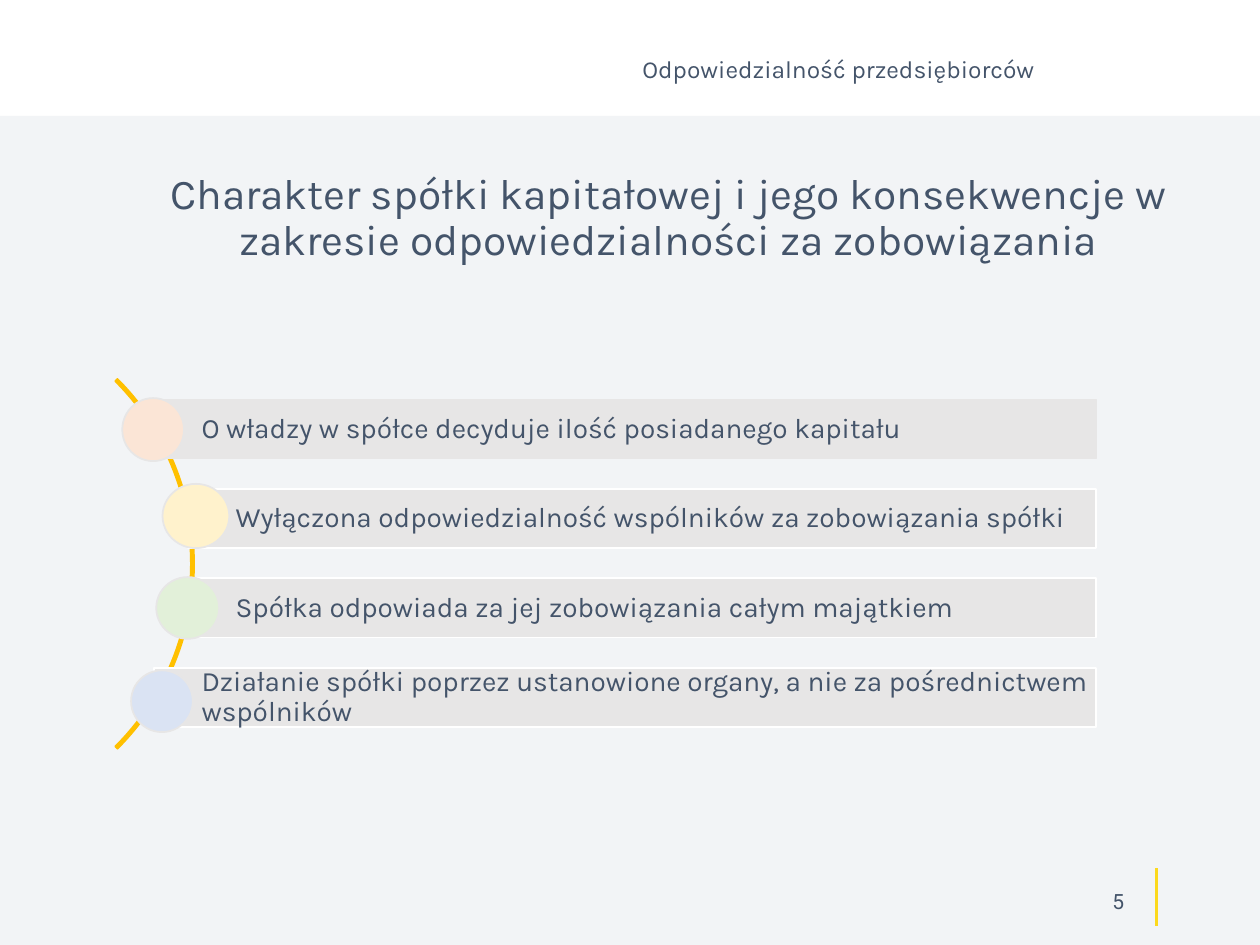
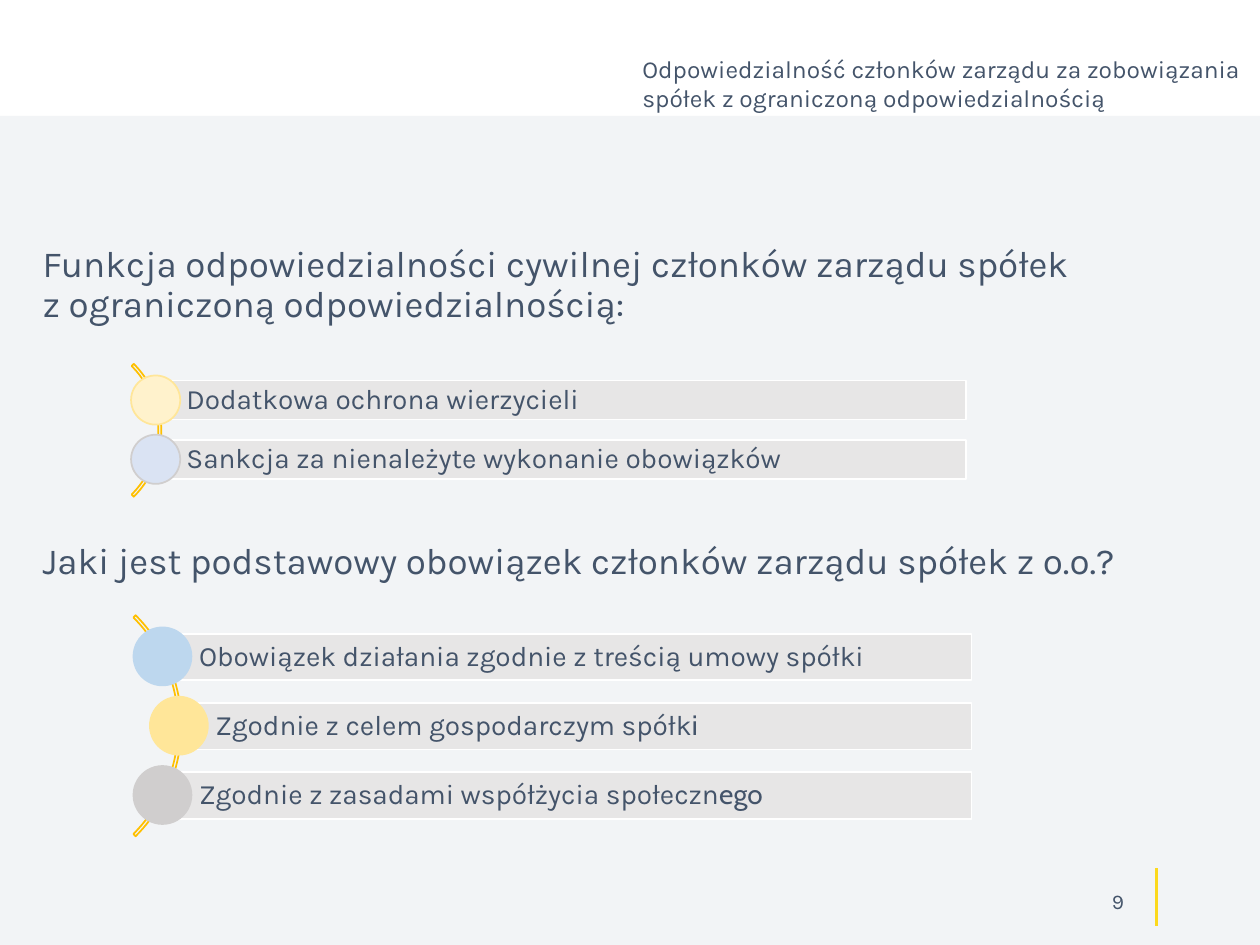
from pptx import Presentation
from pptx.dml.color import RGBColor as RGB
from pptx.enum.shapes import MSO_CONNECTOR as CONNECTOR, MSO_SHAPE as SHAPE
from pptx.enum.text import MSO_ANCHOR as ANCHOR, PP_ALIGN as ALIGN
from pptx.oxml.ns import qn
from pptx.util import Inches, Pt
from lxml import etree

COLORS = {
    "text": "44546A", "panel": "F2F4F6", "accent": "FCD91D", "arc": "FFC000",
    "bar": "E7E6E6", "white": "FFFFFF", "peach": "FBE5D6", "cream": "FFF2CC",
    "mint": "E2F0D9", "ice": "DAE3F3", "sky": "BDD7EE", "sand": "FFE699",
    "gray": "D0CECE",
}
FONT = "Karla"
LAST_LETTERS_FONT = "Cabin"


def add_box(slide, kind, box, fill=None, line=None):
    shape = slide.shapes.add_shape(kind, *map(Inches, box))
    shape.shadow.inherit = False
    if fill:
        shape.fill.solid()
        shape.fill.fore_color.rgb = RGB.from_string(COLORS[fill])
    else:
        shape.fill.background()
    if line:
        shape.line.color.rgb = RGB.from_string(COLORS[line])
        shape.line.width = Pt(1)
    else:
        shape.line.fill.background()
    return shape


def write(shape, text, size, font=FONT, align=ALIGN.LEFT, anchor=ANCHOR.TOP, spacing=None, tail=""):
    frame = shape.text_frame
    frame.word_wrap = True
    frame.vertical_anchor = anchor
    frame.text = text
    paragraph = frame.paragraphs[0]
    paragraph.alignment = align
    if spacing:
        paragraph.line_spacing = spacing
    if tail:
        paragraph.add_run().text = tail
    for run in paragraph.runs:
        run.font.size = Pt(size)
        run.font.name = font
        run.font.color.rgb = RGB.from_string(COLORS["text"])
    if tail:
        paragraph.runs[-1].font.name = LAST_LETTERS_FONT


capital_company = {
    "arc": (-2.61, 2.4, 4.15), "thickness": 0.006, "arc_fill": "arc",
    "top": 3.17, "pitch": 0.71, "height": 0.47, "right": 8.7, "inset": 0.38,
    "rows": [
        ("O władzy w spółce decyduje ilość posiadanego kapitału", "", 1.22, "bar",
         (0.97, 3.16, 0.49, 0.5), "peach", "bar"),
        ("Wyłączona odpowiedzialność wspólników za zobowiązania spółki", "", 1.49, "white",
         (1.29, 3.84, 0.53, 0.51), "cream", "bar"),
        ("Spółka odpowiada za jej zobowiązania całym majątkiem", "", 1.49, "white",
         (1.24, 4.58, 0.5, 0.49), "mint", "bar"),
        ("Działanie spółki poprzez ustanowione organy, a nie za pośrednictwem wspólników", "",
         1.22, "white", (1.04, 5.32, 0.49, 0.49), "ice", "bar"),
    ],
}
liability_function = {
    "arc": (-0.21, 2.67, 1.49), "thickness": 0.016, "arc_fill": None,
    "top": 3.02, "pitch": 0.47, "height": 0.31, "right": 7.67, "inset": 0.25,
    "rows": [
        ("Dodatkowa ochrona wierzycieli", "", 1.23, "white",
         (1.04, 2.98, 0.39, 0.39), "cream", "sand"),
        ("Sankcja za nienależyte wykonanie obowiązków", "", 1.23, "white",
         (1.04, 3.45, 0.39, 0.39), "ice", "gray"),
    ],
}
board_duty = {
    "arc": (-1.04, 4.52, 2.48), "thickness": 0.01, "arc_fill": None,
    "top": 5.03, "pitch": 0.55, "height": 0.37, "right": 7.71, "inset": 0.29,
    "rows": [
        ("Obowiązek działania zgodnie z treścią umowy spółki", "", 1.29, "white",
         (1.06, 4.98, 0.46, 0.46), "sky", "sky"),
        ("Zgodnie z celem gospodarczym spółk", "i", 1.42, "white",
         (1.19, 5.53, 0.46, 0.46), "sand", "sand"),
        ("Zgodnie z zasadami współżycia społeczn", "ego", 1.29, "white",
         (1.06, 6.08, 0.46, 0.46), "gray", "gray"),
    ],
}

pages = [
    {
        "number": "5", "number_font": "Roboto",
        "topic": "Odpowiedzialność przedsiębiorców", "topic_height": 0.34,
        "headings": [
            ("Charakter spółki kapitałowej i jego konsekwencje w zakresie "
             "odpowiedzialności za zobowiązania",
             (0.61, 1.32, 9.39, 1.23), 24.3, ALIGN.CENTER, 0.9),
        ],
        "diagrams": [capital_company],
    },
    {
        "number": "9", "number_font": FONT,
        "topic": "Odpowiedzialność członków zarządu za zobowiązania spółek "
                 "z ograniczoną odpowiedzialnością", "topic_height": 0.57,
        "headings": [
            ("Funkcja odpowiedzialności cywilnej członków zarządu spółek\v"
             "z ograniczoną odpowiedzialnością:",
             (0.24, 1.9, 9.5, 1.61), 21, ALIGN.LEFT, 0.9),
            ("Jaki jest podstawowy obowiązek członków zarządu spółek z o.o.?",
             (0.24, 4.22, 9.5, 0.96), 21, ALIGN.LEFT, None),
        ],
        "diagrams": [liability_function, board_duty],
    },
]

deck = Presentation()
deck.slide_width, deck.slide_height = Inches(10), Inches(7.5)

for page in pages:
    slide = deck.slides.add_slide(deck.slide_layouts[6])
    add_box(slide, SHAPE.RECTANGLE, (0, 0.92, 10, 6.58), "panel")

    page_mark = slide.shapes.add_connector(
        CONNECTOR.STRAIGHT, Inches(9.18), Inches(6.89), Inches(9.18), Inches(7.35))
    page_mark.line.color.rgb = RGB.from_string(COLORS["accent"])
    page_mark.line.width = Pt(1.5)
    etree.SubElement(page_mark._element.spPr, qn("a:effectLst"))

    page_number = slide.shapes.add_textbox(*map(Inches, (7.06, 6.95, 1.96, 0.4)))
    write(page_number, page["number"], 12, page["number_font"], ALIGN.RIGHT, ANCHOR.MIDDLE)

    topic = slide.shapes.add_textbox(*map(Inches, (5, 0.38, 5, page["topic_height"])))
    write(topic, page["topic"], 14)

    for text, box, size, align, spacing in page["headings"]:
        heading = slide.shapes.add_textbox(*map(Inches, box))
        write(heading, text, size, align=align, spacing=spacing)

    for diagram in page["diagrams"]:
        left, top, diameter = diagram["arc"]
        arc = add_box(slide, SHAPE.BLOCK_ARC, (left, top, diameter, diameter),
                      diagram["arc_fill"], "arc")
        for index, value in enumerate((189, 27, diagram["thickness"])):
            arc.adjustments[index] = value

        for index, row in enumerate(diagram["rows"]):
            text, tail, bar_left, bar_line, dot_box, dot_fill, dot_line = row
            bar_top = diagram["top"] + index * diagram["pitch"]
            bar = add_box(slide, SHAPE.RECTANGLE,
                          (bar_left, bar_top, diagram["right"] - bar_left, diagram["height"]),
                          "bar", bar_line)
            frame = bar.text_frame
            frame.margin_left = Inches(diagram["inset"])
            frame.margin_top = frame.margin_right = frame.margin_bottom = Inches(0.04)
            write(bar, text, 16, anchor=ANCHOR.MIDDLE, spacing=0.9, tail=tail)
            add_box(slide, SHAPE.OVAL, dot_box, dot_fill, dot_line)

deck.save("out.pptx")
